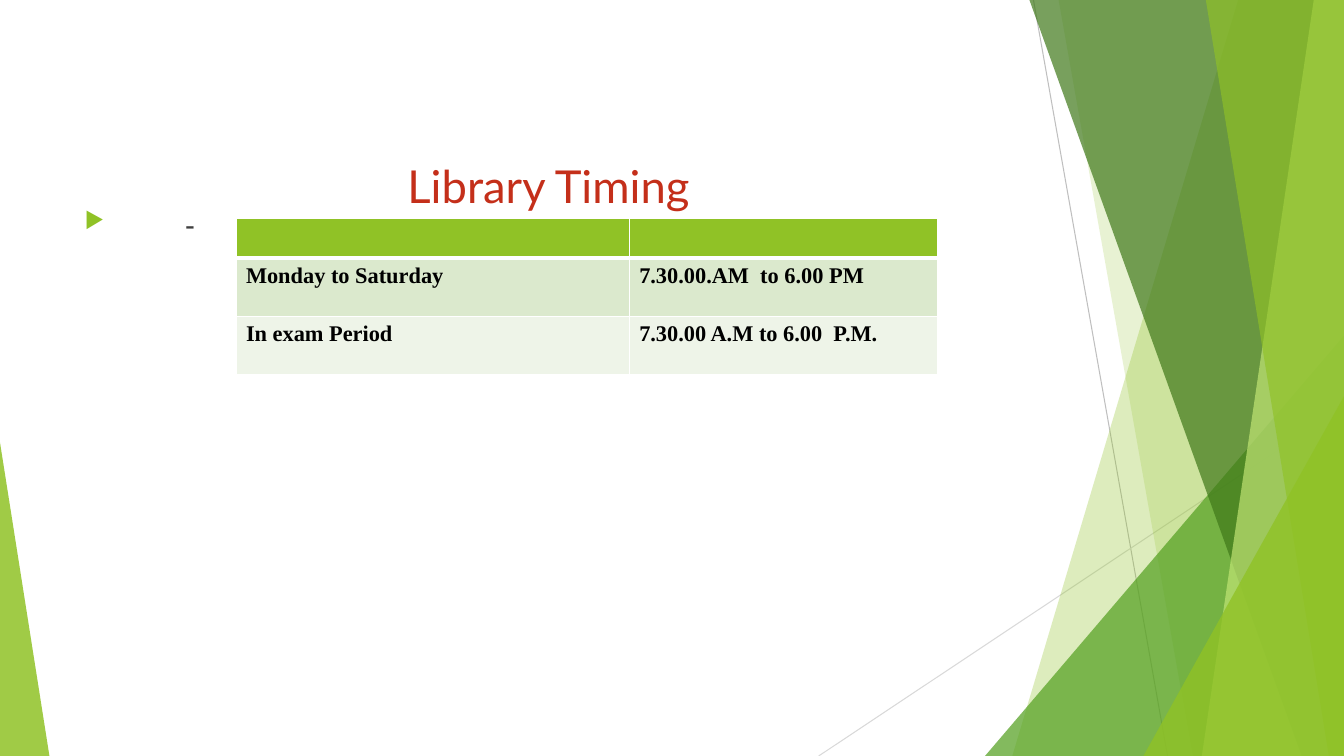
from lxml import etree
from pptx import Presentation
from pptx.dml.color import RGBColor
from pptx.enum.shapes import MSO_CONNECTOR, MSO_SHAPE
from pptx.enum.text import MSO_ANCHOR, PP_ALIGN
from pptx.oxml.ns import qn
from pptx.util import Inches, Pt

STRAIGHT = MSO_CONNECTOR.STRAIGHT
TRIANGLE = MSO_SHAPE.ISOSCELES_TRIANGLE
TOP = MSO_ANCHOR.TOP
CENTER, JUSTIFY = PP_ALIGN.CENTER, PP_ALIGN.JUSTIFY

WIDTH, HEIGHT = 13.33, 7.5
SERIF = "Times New Roman"

WHITE = RGBColor(0xFF, 0xFF, 0xFF)
BLACK = RGBColor(0x00, 0x00, 0x00)
RED = RGBColor(0xC4, 0x2F, 0x1A)
DARK_GRAY = RGBColor(0x40, 0x40, 0x40)
MID_GRAY = RGBColor(0xBF, 0xBF, 0xBF)
LIGHT_GRAY = RGBColor(0xD9, 0xD9, 0xD9)
LIME = RGBColor(0x90, 0xC2, 0x26)
GREEN = RGBColor(0x54, 0xA0, 0x21)
FOREST = RGBColor(0x3F, 0x78, 0x19)
PALE_LIME = RGBColor(0xC0, 0xE4, 0x74)
BAND_DARK = RGBColor(0xDB, 0xE9, 0xCD)
BAND_LIGHT = RGBColor(0xEE, 0xF4, 0xE8)

TIMINGS = [
    ("", ""),
    ("Monday to Saturday", "7.30.00.AM  to 6.00 PM"),
    ("In exam Period", "7.30.00 A.M to 6.00  P.M."),
]


def add_line(page, start, end, color):
    line = page.shapes.add_connector(STRAIGHT, *map(Inches, start + end))
    line.line.color.rgb = color
    line.line.width = Pt(0.75)
    etree.SubElement(line._element.spPr, qn("a:effectLst"))


def paint(shape, color, opacity):
    """Fill a shape without outline; opacity is in percent."""
    shape.shadow.inherit = False
    shape.line.fill.background()
    shape.fill.solid()
    shape.fill.fore_color.rgb = color
    tint = shape._element.spPr.find(qn("a:solidFill"))[0]
    etree.SubElement(tint, qn("a:alpha"), val=str(opacity * 1000))


def add_panel(page, top_left, bottom_left, color, opacity):
    """Add a full-height panel that reaches the right edge of the slide."""
    corners = [(WIDTH, 0), (WIDTH, HEIGHT), (bottom_left, HEIGHT)]
    builder = page.shapes.build_freeform(Inches(top_left), 0)
    builder.add_line_segments([(Inches(x), Inches(y)) for x, y in corners])
    paint(builder.convert_to_shape(), color, opacity)


def add_triangle(page, left, top, right, apex, color, opacity):
    """Add a triangle on the bottom edge; apex runs from 0 (left) to 1 (right)."""
    shape = page.shapes.add_shape(
        TRIANGLE, Inches(left), Inches(top), Inches(right - left), Inches(HEIGHT - top))
    shape.adjustments[0] = apex
    paint(shape, color, opacity)


def add_text(page, left, top, width, height, text, font, size, color, align):
    box = page.shapes.add_textbox(*map(Inches, (left, top, width, height)))
    box.text_frame.word_wrap = True
    box.text_frame.vertical_anchor = TOP
    para = box.text_frame.paragraphs[0]
    para.text = text
    para.alignment = align
    para.font.name = font
    para.font.size = Pt(size)
    para.font.color.rgb = color
    return para


def add_bullet(para):
    para.line_spacing = 1.15
    para.space_before = para.space_after = Pt(10)
    props = para._p.get_or_add_pPr()
    indent = Inches(0.38)
    props.set("marL", str(indent))
    props.set("indent", str(-indent))
    props.set("defTabSz", str(Inches(0.5)))
    bullet_color = etree.Element(qn("a:buClr"))
    etree.SubElement(bullet_color, qn("a:srgbClr"), val=str(LIME))
    marks = [
        bullet_color,
        etree.Element(qn("a:buSzPct"), val="80000"),
        etree.Element(qn("a:buChar"), char="▶"),
    ]
    run_defaults = props.find(qn("a:defRPr"))
    for mark in marks:
        run_defaults.addprevious(mark)


def set_borders(cell, bottom_width):
    props = cell._tc.get_or_add_tcPr()
    for side, width in (("L", 1), ("R", 1), ("T", 1), ("B", bottom_width)):
        border = etree.SubElement(props, qn(f"a:ln{side}"), w=str(Pt(width)))
        fill = etree.SubElement(border, qn("a:solidFill"))
        etree.SubElement(fill, qn("a:srgbClr"), val=str(WHITE))


def add_timing_table(page):
    frame = page.shapes.add_table(
        3, 2, Inches(2.34), Inches(2.17), Inches(6.96), Inches(1.55))
    table = frame.table
    for column, width in zip(table.columns, (3.9, 3.06)):
        column.width = Inches(width)
    fills = (LIME, BAND_DARK, BAND_LIGHT)
    for index, (height, fill) in enumerate(zip((0.39, 0.58, 0.58), fills)):
        table.rows[index].height = Inches(height)
        for cell, text in zip(table.rows[index].cells, TIMINGS[index]):
            set_borders(cell, 1 if index else 3)
            cell.fill.solid()
            cell.fill.fore_color.rgb = fill
            cell.text = text
            font = cell.text_frame.paragraphs[0].font
            font.name = SERIF
            font.size = Pt(16)
            font.bold = True
            font.color.rgb = BLACK


def add_backdrop(page):
    add_line(page, (10.25, 0), (11.58, HEIGHT), MID_GRAY)
    add_line(page, (WIDTH, 4.03), (8.12, HEIGHT), LIGHT_GRAY)
    add_panel(page, 12.28, 10.04, LIME, 30)
    add_panel(page, 10.5, 11.83, LIME, 20)
    add_triangle(page, 9.77, 3.33, WIDTH, 1, GREEN, 72)
    add_panel(page, 10.21, 12.91, FOREST, 70)
    add_panel(page, 13.03, 11.92, PALE_LIME, 70)
    add_panel(page, 11.96, 13.18, LIME, 65)
    add_triangle(page, 11.34, 3.93, WIDTH, 1, LIME, 80)
    add_triangle(page, 0, 4.39, 0.49, 0, LIME, 85)


def main():
    deck = Presentation()
    deck.slide_width, deck.slide_height = Inches(WIDTH), Inches(HEIGHT)
    page = deck.slides.add_slide(deck.slide_layouts[6])
    add_backdrop(page)
    add_text(page, 0.74, 1.52, 9.4, 0.64, "Library Timing", "Lato", 32.4, RED, CENTER)
    dash = add_text(page, 0.74, 1.95, 7.12, 1.11, "\t \t-", SERIF, 20, DARK_GRAY, JUSTIFY)
    dash.font.bold = True
    add_bullet(dash)
    add_timing_table(page)
    deck.save("out.pptx")


if __name__ == "__main__":
    main()
